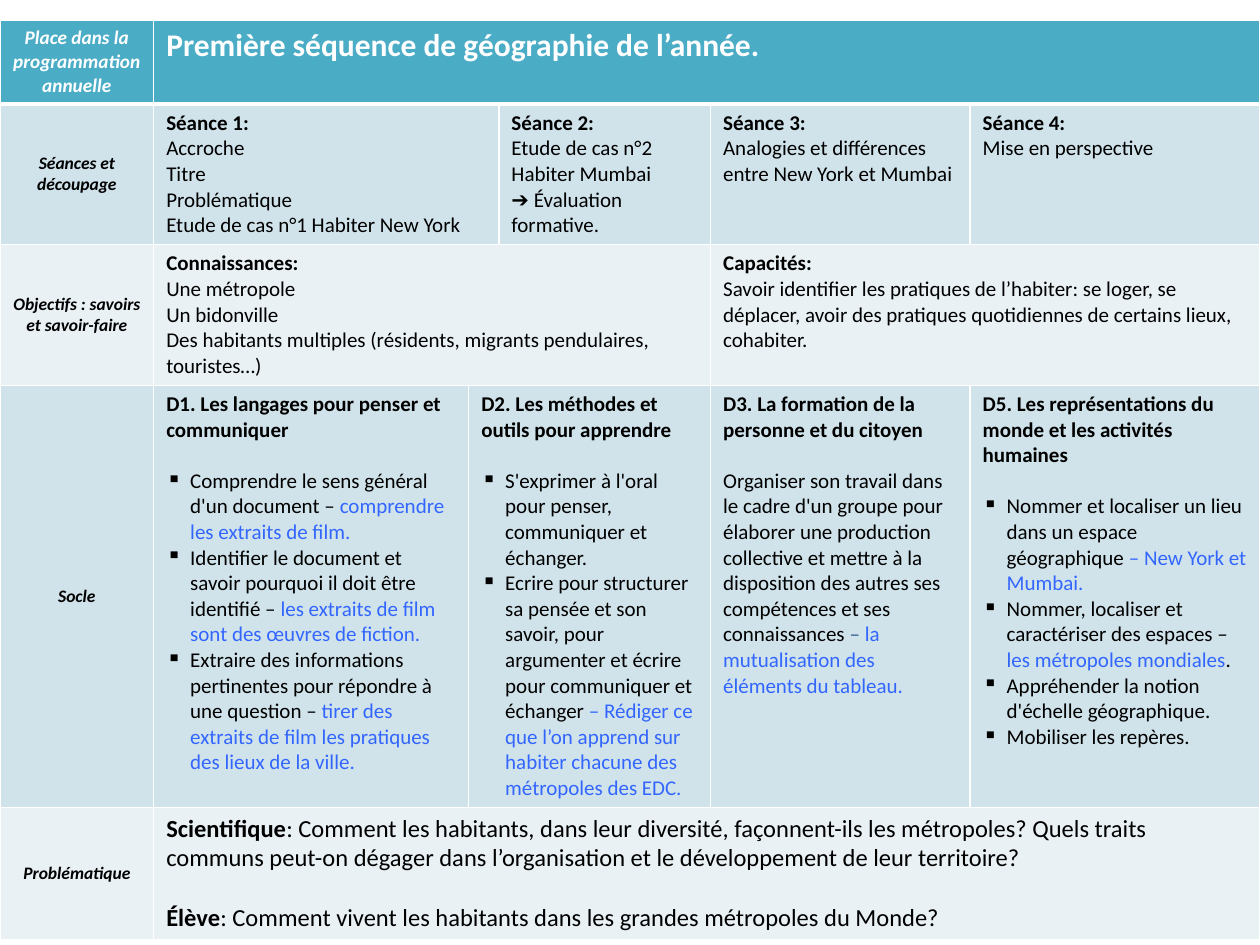
from dataclasses import dataclass

from lxml import etree
from pptx import Presentation
from pptx.dml.color import RGBColor
from pptx.enum.text import MSO_ANCHOR, PP_ALIGN
from pptx.oxml.ns import qn
from pptx.util import Inches, Pt

CENTER = PP_ALIGN.CENTER
MIDDLE, TOP = MSO_ANCHOR.MIDDLE, MSO_ANCHOR.TOP

COLORS = {
    "header": "4BACC6",
    "dark_band": "D0E3EA",
    "light_band": "E9F1F5",
    "white": "FFFFFF",
    "text": "000000",
    "example": "3366FF",
    "dash": "376092",
}
COLUMN_WIDTHS = [1.22, 2.5, 0.24, 1.68, 2.06, 2.3]
ROW_HEIGHTS = [0.65, 1.1, 1.1, 3.3, 1.03]
BULLET_INDENT = 0.19


@dataclass
class Para:
    """A paragraph made of (text, colour name, bold) spans."""
    spans: list
    bullet: bool = False
    gap: float = 0


def title(text):
    return Para([(text, "text", True)])


def plain(text):
    return Para([(text, "text", False)])


def with_example(text, *examples, bullet=True):
    """A plain text followed by (text, colour name) spans."""
    spans = [(text, "text", False)] + [(words, color, False) for words, color in examples]
    return Para(spans, bullet)


def question(audience, text, gap=0):
    return Para([(audience, "text", True), (text, "text", False)], gap=gap)


def skill(heading, *paras):
    """A heading, then paragraphs set one line lower."""
    paras[0].gap = 14.6
    return [title(heading), *paras]


# Each row: label, label size, text size, fill, then (first column, last column, paragraphs)
ROWS = [
    ("Place dans la programmation annuelle", 11, 18, "header", [
        (1, 5, [Para([("Première séquence de géographie de l’année.", "white", True)])]),
    ]),
    ("Séances et découpage", 10, 12, "dark_band", [
        (1, 2, [title("Séance 1:"), plain("Accroche"), plain("Titre"),
                plain("Problématique"), plain("Etude de cas n°1 Habiter New York")]),
        (3, 3, [title("Séance 2:"), plain("Etude de cas n°2 Habiter Mumbai"),
                plain("➔ Évaluation formative.")]),
        (4, 4, [title("Séance 3:"),
                plain("Analogies et différences entre New York et Mumbai")]),
        (5, 5, [title("Séance 4:"), plain("Mise en perspective")]),
    ]),
    ("Objectifs : savoirs et savoir-faire", 10, 12, "light_band", [
        (1, 3, [title("Connaissances:"), plain("Une métropole"), plain("Un bidonville"),
                plain("Des habitants multiples (résidents, migrants pendulaires, "
                      "touristes…)")]),
        (4, 5, [title("Capacités:"),
                plain("Savoir identifier les pratiques de l’habiter: se loger, se déplacer, "
                      "avoir des pratiques quotidiennes de certains lieux, cohabiter.")]),
    ]),
    ("Socle", 10, 12, "dark_band", [
        (1, 1, skill(
            "D1. Les langages pour penser et communiquer",
            with_example("Comprendre le sens général d'un document – ",
                         ("comprendre les extraits de film.", "example")),
            with_example("Identifier le document et savoir pourquoi il doit être identifié – ",
                         ("les extraits de film sont des œuvres de fiction.", "example")),
            with_example("Extraire des informations pertinentes pour répondre à une question – ",
                         ("tirer des extraits de film les pratiques des lieux de la ville.",
                          "example")))),
        (2, 3, skill(
            "D2. Les méthodes et outils pour apprendre",
            with_example("S'exprimer à l'oral pour penser, communiquer et échanger."),
            with_example("Ecrire pour structurer sa pensée et son savoir, pour argumenter "
                         "et écrire pour communiquer et échanger ",
                         ("– Rédiger ce que l’on apprend sur habiter chacune des "
                          "métropoles des EDC.", "example")))),
        (4, 4, skill(
            "D3. La formation de la personne et du citoyen",
            with_example("Organiser son travail dans le cadre d'un groupe pour élaborer une "
                         "production collective et mettre à la disposition des autres ses "
                         "compétences et ses connaissances ",
                         ("– ", "dash"),
                         ("la mutualisation des éléments du tableau.", "example"),
                         bullet=False))),
        (5, 5, skill(
            "D5. Les représentations du monde et les activités humaines",
            with_example("Nommer et localiser un lieu dans un espace géographique",
                         (" – New York et Mumbai.", "example")),
            with_example("Nommer, localiser et caractériser des espaces – ",
                         ("les métropoles mondiales", "example"), (".", "text")),
            with_example("Appréhender la notion d'échelle géographique."),
            with_example("Mobiliser les repères."))),
    ]),
    ("Problématique", 10, 14, "light_band", [
        (1, 5, [question("Scientifique",
                         ": Comment les habitants, dans leur diversité, façonnent-ils les "
                         "métropoles? Quels traits communs peut-on dégager dans "
                         "l’organisation et le développement de leur territoire?"),
                question("Élève",
                         ": Comment vivent les habitants dans les grandes métropoles "
                         "du Monde?", gap=17)]),
    ]),
]


class SequencePage:
    font = "Calibri"

    def __init__(self, deck):
        self.page = deck.slides.add_slide(deck.slide_layouts[6])

    def table(self, left, top, widths, heights):
        frame = self.page.shapes.add_table(
            len(heights), len(widths), Inches(left), Inches(top),
            Inches(sum(widths)), Inches(sum(heights)))
        table = frame.table
        table.first_row = table.horz_banding = False
        for column, width in zip(table.columns, widths):
            column.width = Inches(width)
        for row, height in zip(table.rows, heights):
            row.height = Inches(height)
        return table

    def cell_style(self, cell, fill, top=1, bottom=1):
        properties = cell._tc.get_or_add_tcPr()
        for side, width in (("L", 1), ("R", 1), ("T", top), ("B", bottom)):
            line = etree.SubElement(properties, qn(f"a:ln{side}"), w=str(Pt(width)))
            solid = etree.SubElement(line, qn("a:solidFill"))
            etree.SubElement(solid, qn("a:srgbClr"), val=COLORS["white"])
        cell.fill.solid()
        cell.fill.fore_color.rgb = RGBColor.from_string(COLORS[fill])

    def bullet(self, para):
        properties = para._p.get_or_add_pPr()
        properties.set("marL", str(Inches(BULLET_INDENT)))
        properties.set("indent", str(-Inches(BULLET_INDENT)))
        etree.SubElement(properties, qn("a:buChar"), char="▪")

    def text(self, cell, paras, size, italic=False, align=None, anchor=TOP):
        cell.vertical_anchor = anchor
        frame = cell.text_frame
        for index, content in enumerate(paras):
            para = frame.add_paragraph() if index else frame.paragraphs[0]
            para.alignment = align
            if content.bullet:
                self.bullet(para)
            if content.gap:
                para.space_before = Pt(content.gap)
            for words, color, bold in content.spans:
                span = para.add_run()
                span.text = words
                font = span.font
                font.name, font.size = self.font, Pt(size)
                font.bold, font.italic = bold, italic
                font.color.rgb = RGBColor.from_string(COLORS[color])


def main():
    deck = Presentation()
    deck.slide_width, deck.slide_height = Inches(10), Inches(7.5)
    sequence = SequencePage(deck)
    table = sequence.table(0, 0.16, COLUMN_WIDTHS, ROW_HEIGHTS)
    for row, (label, label_size, size, fill, blocks) in enumerate(ROWS):
        for column in range(len(COLUMN_WIDTHS)):
            sequence.cell_style(table.cell(row, column), fill,
                                top=3 if row == 1 else 1, bottom=3 if row == 0 else 1)
        label_color, anchor = ("text", MIDDLE) if row else ("white", TOP)
        sequence.text(table.cell(row, 0), [Para([(label, label_color, True)])],
                      label_size, italic=True, align=CENTER, anchor=anchor)
        for first, last, paras in blocks:
            cell = table.cell(row, first)
            if last > first:
                cell.merge(table.cell(row, last))
            sequence.text(cell, paras, size)
    deck.save("out.pptx")


if __name__ == "__main__":
    main()
